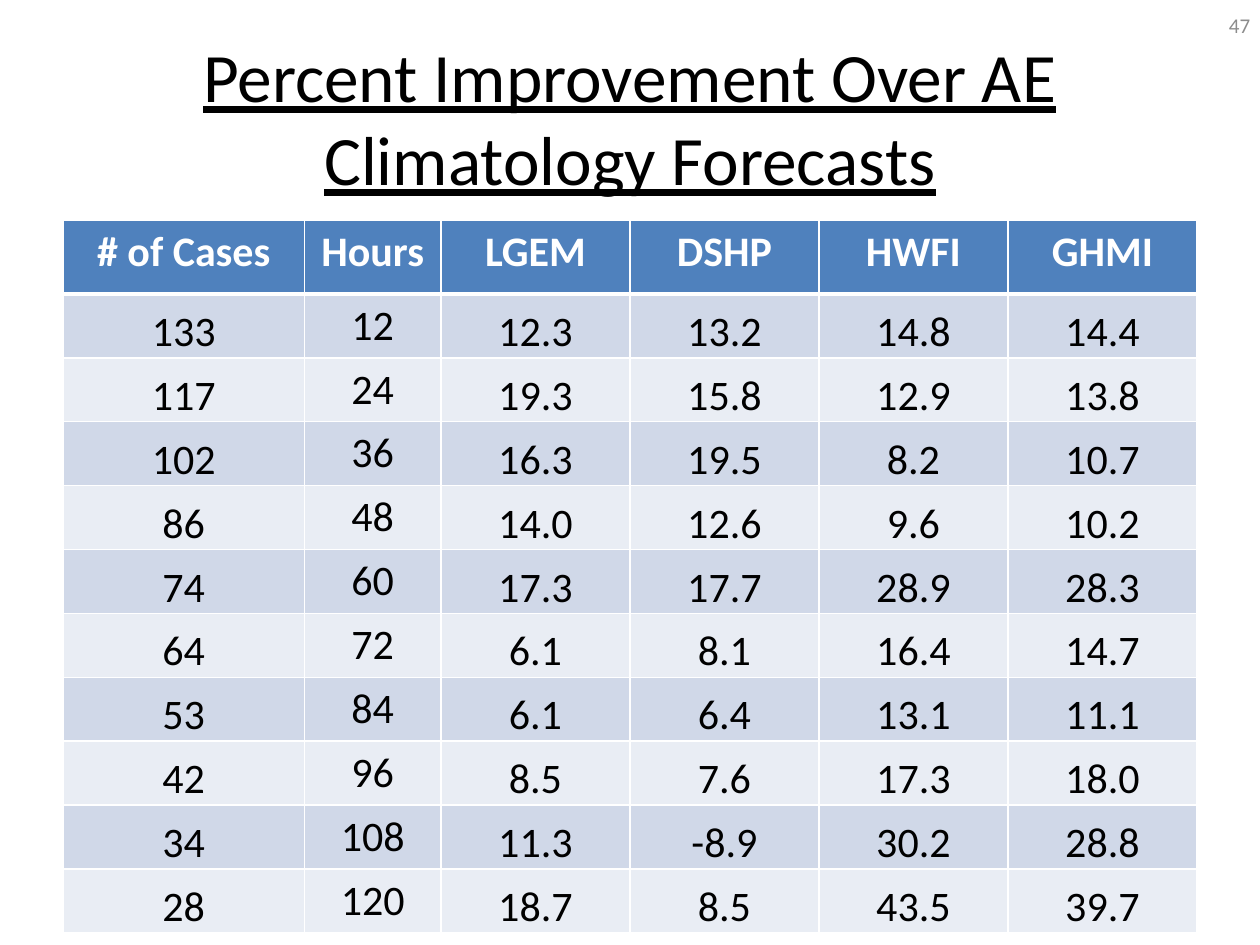
import pptx
import pptx.dml.color
import pptx.enum.text
import pptx.oxml
import pptx.oxml.ns
import pptx.util

Pt = pptx.util.Pt
RGBColor = pptx.dml.color.RGBColor
ALIGN = pptx.enum.text.PP_ALIGN
ANCHOR = pptx.enum.text.MSO_ANCHOR

BLACK = RGBColor(0x00, 0x00, 0x00)
WHITE = RGBColor(0xFF, 0xFF, 0xFF)
GREY = RGBColor(0x8C, 0x8C, 0x8C)
HEADER_BLUE = RGBColor(0x4F, 0x81, 0xBD)
BAND_DARK = RGBColor(0xD0, 0xD8, 0xE8)
BAND_LIGHT = RGBColor(0xE9, 0xED, 0xF4)

FONT = "Calibri"
COLUMN_WIDTHS = [138, 78, 108, 108, 108, 108]
HEADER_HEIGHT = 42
ROW_HEIGHT = 34.56
HOURS_COLUMN = 1

HEADERS = ["# of Cases", "Hours", "LGEM", "DSHP", "HWFI", "GHMI"]
FORECASTS = [
    ["133", "12", "12.3", "13.2", "14.8", "14.4"],
    ["117", "24", "19.3", "15.8", "12.9", "13.8"],
    ["102", "36", "16.3", "19.5", "8.2", "10.7"],
    ["86", "48", "14.0", "12.6", "9.6", "10.2"],
    ["74", "60", "17.3", "17.7", "28.9", "28.3"],
    ["64", "72", "6.1", "8.1", "16.4", "14.7"],
    ["53", "84", "6.1", "6.4", "13.1", "11.1"],
    ["42", "96", "8.5", "7.6", "17.3", "18.0"],
    ["34", "108", "11.3", "-8.9", "30.2", "28.8"],
    ["28", "120", "18.7", "8.5", "43.5", "39.7"],
]


def write_text(frame, text, size, color, align, bold=False, underline=False):
    para = frame.paragraphs[0]
    para.alignment = align
    span = para.add_run()
    span.text = text
    span.font.name = FONT
    span.font.size = Pt(size)
    span.font.color.rgb = color
    span.font.bold = bold
    span.font.underline = underline


def set_borders(cell, bottom_width):
    properties = cell._tc.get_or_add_tcPr()
    widths = {"lnL": 1, "lnR": 1, "lnT": 1, "lnB": bottom_width}
    for position, (side, width) in enumerate(widths.items()):
        line = pptx.oxml.parse_xml(
            f'<a:{side} {pptx.oxml.ns.nsdecls("a")} w="{Pt(width)}">'
            f'<a:solidFill><a:srgbClr val="{WHITE}"/></a:solidFill></a:{side}>'
        )
        properties.insert(position, line)


def place_title(page, left, top, width, height):
    title = page.shapes.title
    title.left, title.top = Pt(left), Pt(top)
    title.width, title.height = Pt(width), Pt(height)
    frame = title.text_frame
    frame.word_wrap = True
    frame.auto_size = pptx.enum.text.MSO_AUTO_SIZE.NONE
    frame.vertical_anchor = ANCHOR.MIDDLE
    write_text(frame, "Percent Improvement Over AE Climatology Forecasts",
               39.6, BLACK, ALIGN.CENTER, underline=True)


def place_page_number(page, left, top, width, height):
    box = page.shapes.add_textbox(Pt(left), Pt(top), Pt(width), Pt(height))
    frame = box.text_frame
    frame.word_wrap = True
    frame.vertical_anchor = ANCHOR.MIDDLE
    write_text(frame, "47", 12, GREY, ALIGN.RIGHT)


def format_header_cell(cell, text):
    cell.fill.solid()
    cell.fill.fore_color.rgb = HEADER_BLUE
    set_borders(cell, 3)
    write_text(cell.text_frame, text, 24, WHITE, ALIGN.CENTER, bold=True)


def format_value_cell(cell, text, band, is_hour):
    cell.fill.solid()
    cell.fill.fore_color.rgb = band
    set_borders(cell, 1)
    if not is_hour:
        cell.vertical_anchor = ANCHOR.BOTTOM
        cell.margin_left = cell.margin_right = cell.margin_top = Pt(0.75)
        cell.margin_bottom = Pt(0)
    write_text(cell.text_frame, text, 24, BLACK, ALIGN.CENTER)


def place_forecast_table(page, left, top, width, height):
    table = page.shapes.add_table(
        len(FORECASTS) + 1, len(HEADERS), Pt(left), Pt(top), Pt(width), Pt(height)
    ).table
    for column, share in zip(table.columns, COLUMN_WIDTHS):
        column.width = Pt(width * share / sum(COLUMN_WIDTHS))
    for index, row in enumerate(table.rows):
        row.height = Pt(ROW_HEIGHT if index else HEADER_HEIGHT)
    for column, text in enumerate(HEADERS):
        format_header_cell(table.cell(0, column), text)
    for row, values in enumerate(FORECASTS, start=1):
        band = BAND_DARK if row % 2 else BAND_LIGHT
        for column, text in enumerate(values):
            format_value_cell(table.cell(row, column), text, band, column == HOURS_COLUMN)


def main():
    deck = pptx.Presentation()
    deck.slide_width, deck.slide_height = Pt(720), Pt(540)
    page = deck.slides.add_slide(deck.slide_layouts[5])
    place_title(page, 36, 21.6, 648, 90)
    place_forecast_table(page, 36, 126, 648, 402)
    place_page_number(page, 553.7, 0, 167.8, 28.8)
    deck.save("out.pptx")


if __name__ == "__main__":
    main()
